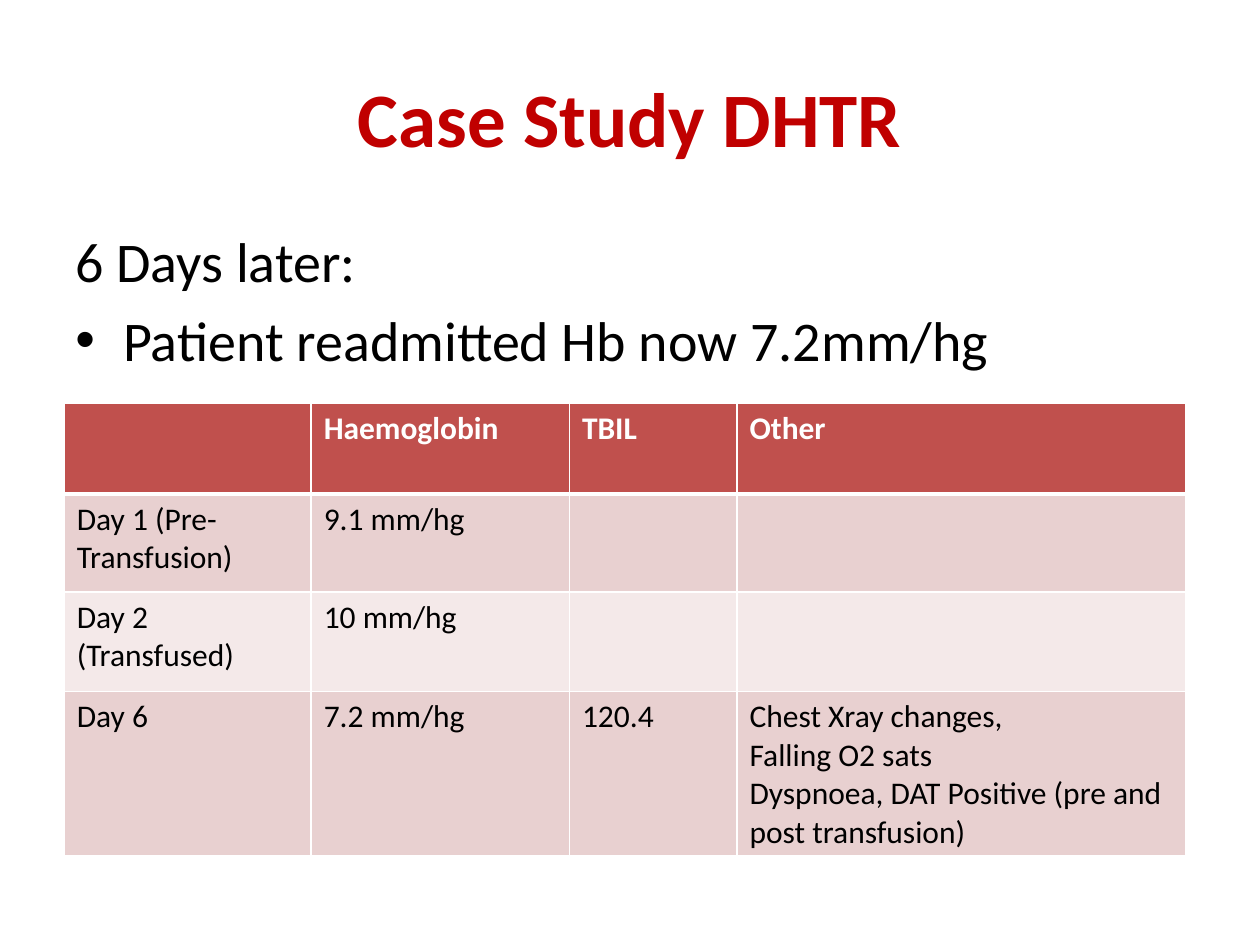
from lxml.etree import SubElement
from pptx import Presentation
from pptx.dml.color import RGBColor
from pptx.enum.text import MSO_ANCHOR, PP_ALIGN
from pptx.oxml import parse_xml
from pptx.oxml.ns import nsdecls, qn
from pptx.util import Inches, Pt

TITLE_FORMAT = {"name": "Calibri", "size": Pt(44), "bold": True}
BODY_FORMAT = {"name": "Calibri", "size": Pt(32), "bold": False}
HEADER_FORMAT = {"name": "Calibri", "size": Pt(18), "bold": True}
CELL_FORMAT = {"name": "Calibri", "size": Pt(18), "bold": False}

COLUMN_WIDTHS = [1.96, 2.05, 1.33, 3.56]
ROW_HEIGHTS = [0.72, 0.78, 0.79, 1.02]
ROW_FILLS = ["C0504D", "E8D0D0", "F4E9E9", "E8D0D0"]
RESULTS = [
    ["", "Haemoglobin", "TBIL", "Other"],
    ["Day 1 (Pre-Transfusion)", "9.1 mm/hg", "", ""],
    ["Day 2 (Transfused)", "10 mm/hg", "", ""],
    ["Day 6", "7.2 mm/hg", "120.4",
     "Chest Xray changes,\nFalling O2 sats\n"
     "Dyspnoea, DAT Positive (pre and post transfusion)"],
]


def color(hex_value):
    """Turn a hex string into a colour."""
    return RGBColor.from_string(hex_value)


def write_text(frame, text, font_format, hex_value):
    """Write one paragraph per line and format its runs."""
    frame.text = text
    for paragraph in frame.paragraphs:
        for run in paragraph.runs:
            for attribute, value in font_format.items():
                setattr(run.font, attribute, value)
            run.font.color.rgb = color(hex_value)


def add_frame(slide, box):
    """Add a wrapping text box and return its text frame."""
    frame = slide.shapes.add_textbox(*map(Inches, box)).text_frame
    frame.word_wrap = True
    return frame


def add_title(slide, box):
    """Place the centred title in its box."""
    title = add_frame(slide, box)
    title.vertical_anchor = MSO_ANCHOR.MIDDLE
    write_text(title, "Case Study DHTR", TITLE_FORMAT, "C00000")
    title.paragraphs[0].alignment = PP_ALIGN.CENTER


def add_findings(slide, box):
    """Place the lead line and its bullet in their box."""
    findings = add_frame(slide, box)
    write_text(findings, "6 Days later:\nPatient readmitted Hb now 7.2mm/hg",
               BODY_FORMAT, "000000")
    for paragraph in findings.paragraphs:
        paragraph.space_before = Pt(6.4)
    properties = findings.paragraphs[1]._p.get_or_add_pPr()
    indent = Inches(0.38)
    properties.set("marL", str(indent))
    properties.set("indent", str(-indent))
    SubElement(properties, qn("a:buFont"), typeface="Arial")
    SubElement(properties, qn("a:buChar"), char="•")


def set_borders(cell, top, bottom):
    """Draw white borders of the given top and bottom widths in points."""
    widths = {"lnL": 1, "lnR": 1, "lnT": top, "lnB": bottom}
    properties = cell._tc.get_or_add_tcPr()
    for position, (side, width) in enumerate(widths.items()):
        properties.insert(position, parse_xml(
            f'<a:{side} {nsdecls("a")} w="{Pt(width)}"><a:solidFill>'
            f'<a:srgbClr val="FFFFFF"/></a:solidFill></a:{side}>'))


def add_results(slide, box):
    """Place the table of daily results in its box."""
    results = slide.shapes.add_table(
        len(RESULTS), len(COLUMN_WIDTHS), *map(Inches, box)).table
    for column, width in zip(results.columns, COLUMN_WIDTHS):
        column.width = Inches(width)
    for index, (row, height) in enumerate(zip(results.rows, ROW_HEIGHTS)):
        row.height = Inches(height)
        is_header = index == 0
        font_format = HEADER_FORMAT if is_header else CELL_FORMAT
        text_color = "FFFFFF" if is_header else "000000"
        for cell, text in zip(row.cells, RESULTS[index]):
            write_text(cell.text_frame, text, font_format, text_color)
            cell.fill.solid()
            cell.fill.fore_color.rgb = color(ROW_FILLS[index])
            set_borders(cell, top=3 if index == 1 else 1,
                        bottom=3 if is_header else 1)


def main():
    """Build the case study slide."""
    presentation = Presentation()
    presentation.slide_width = Inches(10)
    presentation.slide_height = Inches(7.5)
    slide = presentation.slides.add_slide(presentation.slide_layouts[6])
    add_title(slide, (0.5, 0.3, 9, 1.25))
    add_findings(slide, (0.5, 1.75, 9, 4.95))
    add_results(slide, (0.51, 3.2, sum(COLUMN_WIDTHS), sum(ROW_HEIGHTS)))
    presentation.save("out.pptx")


if __name__ == "__main__":
    main()
